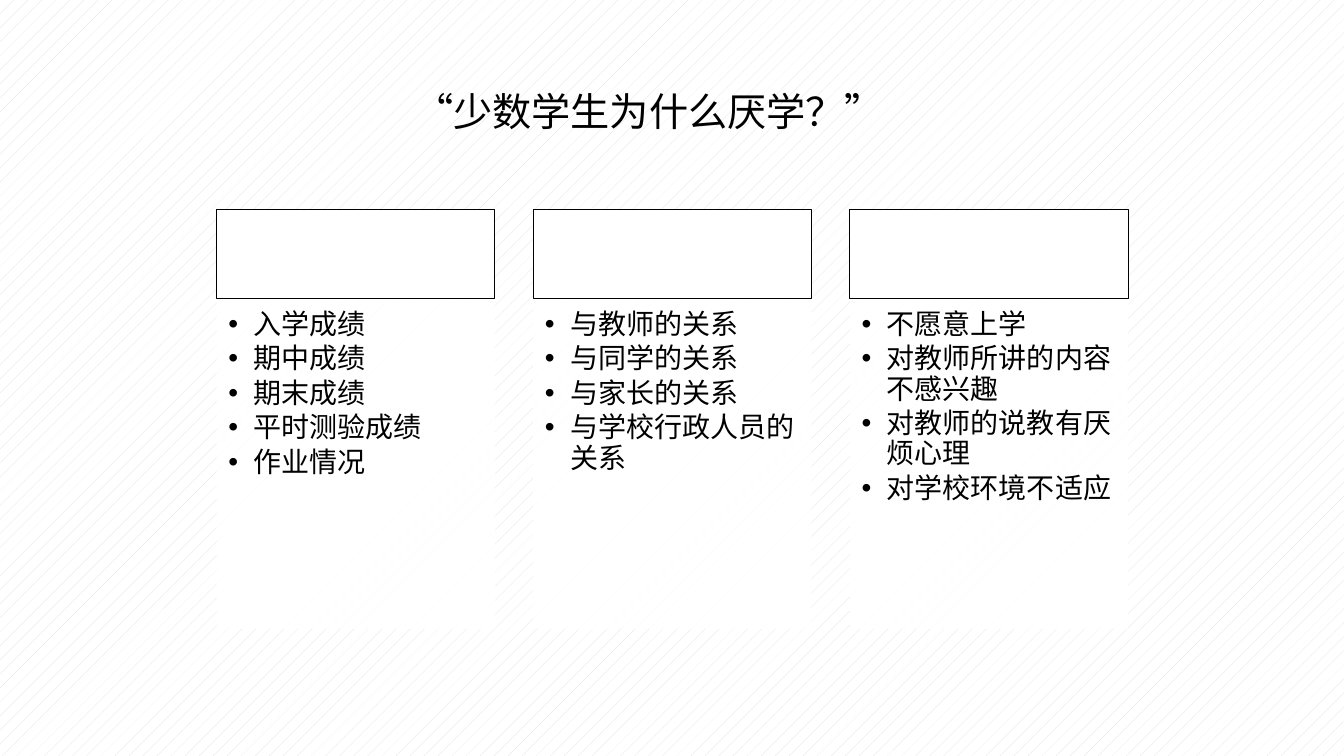
from pptx import Presentation
from pptx.dml.color import RGBColor
from pptx.enum import dml, shapes, text
from pptx.oxml import ns, xmlchemy
from pptx.util import Pt

COLORS = {"ink": "000000", "paper": "FFFFFF", "hatch": "DDDDDD"}
FONT = "Noto Sans CJK SC"
QUESTION = "“少数学生为什么厌学？”"
REASONS = [
    ["入学成绩", "期中成绩", "期末成绩", "平时测验成绩", "作业情况"],
    ["与教师的关系", "与同学的关系", "与家长的关系", "与学校行政人员的关系"],
    ["不愿意上学", "对教师所讲的内容不感兴趣", "对教师的说教有厌烦心理", "对学校环境不适应"],
]


def color(name):
    return RGBColor.from_string(COLORS[name])


def add_element(parent, tag, **attributes):
    element = xmlchemy.OxmlElement(tag)
    for key, value in attributes.items():
        element.set(key, value)
    parent.append(element)


def place(part, left, top, width, height):
    part.left, part.top = Pt(left), Pt(top)
    part.width, part.height = Pt(width), Pt(height)


def format_runs(paragraph, size):
    for run in paragraph.runs:
        run.font.size = Pt(size)
        run.font.bold = False
        run.font.color.rgb = color("ink")
        run.font.name = FONT
        add_element(run._r.get_or_add_rPr(), "a:ea", typeface=FONT)


def paint_background(slide):
    fill = slide.background.fill
    fill.patterned()
    fill.pattern = dml.MSO_PATTERN.PERCENT_5
    fill.fore_color.rgb = color("hatch")
    fill.back_color.rgb = color("paper")


def write_question(title, left, top, width, height):
    place(title, left, top, width, height)
    frame = title.text_frame
    frame.text = QUESTION
    frame.word_wrap = False
    frame.auto_size = text.MSO_AUTO_SIZE.NONE
    frame.vertical_anchor = text.MSO_ANCHOR.MIDDLE
    frame.paragraphs[0].alignment = text.PP_ALIGN.CENTER
    format_runs(frame.paragraphs[0], 28)


def add_heading(slide, left, top, width, height):
    heading = slide.shapes.add_shape(
        shapes.MSO_SHAPE.RECTANGLE, Pt(left), Pt(top), Pt(width), Pt(height))
    heading.shadow.inherit = False
    heading.fill.solid()
    heading.fill.fore_color.rgb = color("paper")
    heading.line.color.rgb = color("ink")
    heading.line.width = Pt(0.5)


def write_reasons(body, reasons, left, top, width, height):
    place(body, left, top, width, height)
    body.fill.solid()
    body.fill.fore_color.rgb = color("paper")
    paper = body._element.spPr.find(".//" + ns.qn("a:srgbClr"))
    add_element(paper, "a:alpha", val="90000")
    frame = body.text_frame
    frame.text = "\n".join(reasons)
    frame.word_wrap = True
    frame.auto_size = text.MSO_AUTO_SIZE.NONE
    frame.vertical_anchor = text.MSO_ANCHOR.TOP
    frame.margin_left = frame.margin_top = Pt(8.4)
    frame.margin_right, frame.margin_bottom = Pt(11.2), Pt(12.6)
    for paragraph in frame.paragraphs:
        properties = paragraph._p.get_or_add_pPr()
        properties.set("marL", str(Pt(18)))
        properties.set("indent", str(Pt(-18)))
        add_element(properties, "a:buFont", typeface="Arial")
        add_element(properties, "a:buChar", char="•")
        paragraph.alignment = text.PP_ALIGN.LEFT
        paragraph.line_spacing = 0.9
        paragraph.space_before = Pt(0)
        paragraph.space_after = Pt(3)
        format_runs(paragraph, 20)


def build_columns(slide, bodies, left, top, width, height):
    gap, heading_height = 27.4, 63.4
    column_width = (width - gap * (len(REASONS) - 1)) / len(REASONS)
    for index, (body, reasons) in enumerate(zip(bodies, REASONS)):
        column_left = left + index * (column_width + gap)
        add_heading(slide, column_left, top, column_width, heading_height)
        write_reasons(body, reasons, column_left, top + heading_height,
                      column_width, height - heading_height)


def main():
    deck = Presentation()
    deck.slide_width, deck.slide_height = Pt(960), Pt(540)
    slide = deck.slides.add_slide(deck.slide_layouts.get_by_name("Comparison"))
    paint_background(slide)
    title, *bodies, spare = slide.placeholders
    spare._element.getparent().remove(spare._element)
    write_question(title, 285.8, 59, 355.7, 41)
    build_columns(slide, bodies, 154.8, 149.8, 650.9, 299.5)
    deck.save("out.pptx")


if __name__ == "__main__":
    main()
